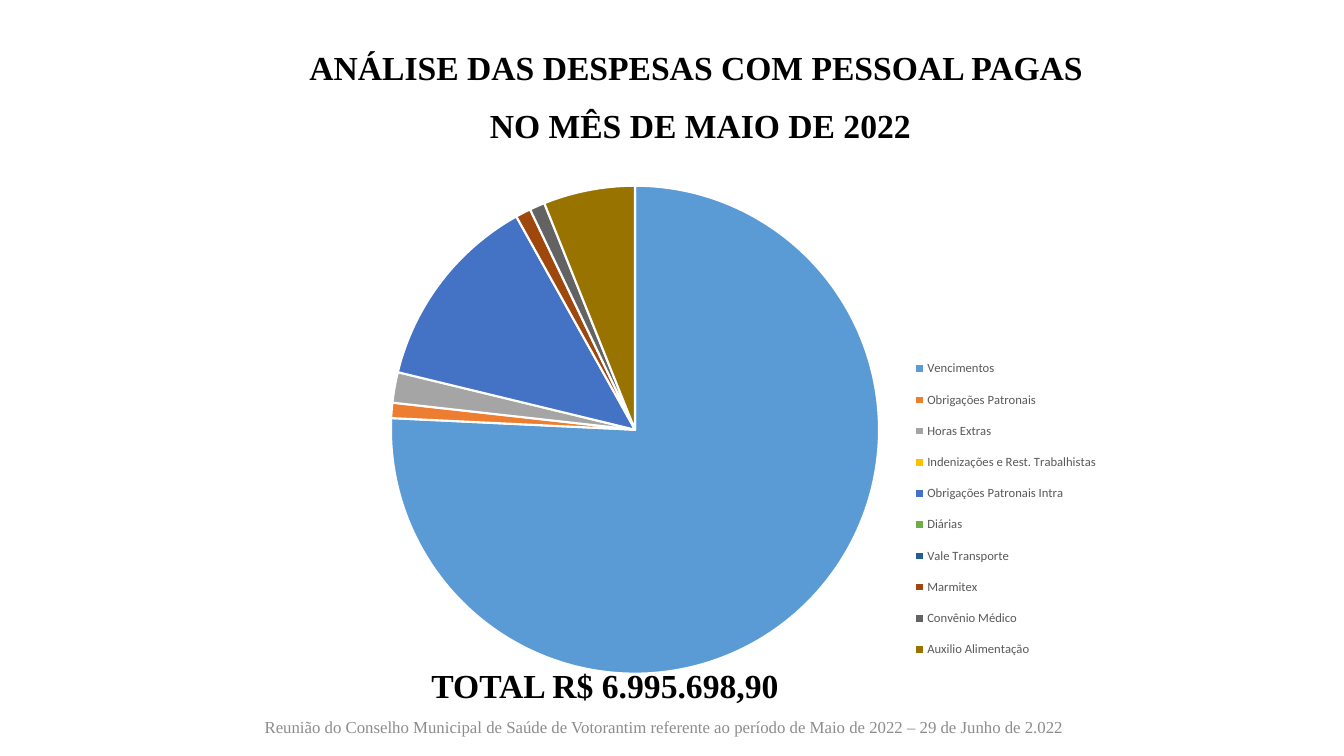
from lxml import etree
from pptx import Presentation
from pptx import util as u
from pptx.chart.data import CategoryChartData
from pptx.dml.color import RGBColor
from pptx.enum import chart as ch, text as t
from pptx.oxml.ns import qn

WIDTH, HEIGHT = u.Inches(13.33), u.Inches(7.5)
SERIF, SANS = "Times New Roman", "Calibri"
BLACK = RGBColor(0x00, 0x00, 0x00)
WHITE = RGBColor(0xFF, 0xFF, 0xFF)
LEGEND_GRAY = RGBColor(0x59, 0x59, 0x59)
FOOTER_GRAY = RGBColor(0x8C, 0x8C, 0x8C)

# Expense, share of the total in percent, slice colour
EXPENSES = [
    ("Vencimentos", 75, RGBColor(0x5B, 0x9B, 0xD5)),
    ("Obrigações Patronais", 1, RGBColor(0xED, 0x7D, 0x31)),
    ("Horas Extras", 2, RGBColor(0xA5, 0xA5, 0xA5)),
    ("Indenizações e Rest. Trabalhistas", 0, RGBColor(0xFF, 0xC0, 0x00)),
    ("Obrigações Patronais Intra ", 13, RGBColor(0x44, 0x72, 0xC4)),
    ("Diárias", 0, RGBColor(0x70, 0xAD, 0x47)),
    ("Vale Transporte", 0, RGBColor(0x25, 0x5E, 0x91)),
    ("Marmitex", 1, RGBColor(0x9E, 0x48, 0x0E)),
    ("Convênio Médico", 1, RGBColor(0x63, 0x63, 0x63)),
    ("Auxilio Alimentação", 6, RGBColor(0x99, 0x73, 0x00)),
]


def area(left, top, width, height):
    """Turn percentages of the slide into lengths."""
    return [int(share * side / 100) for share, side in
            zip((left, top, width, height), (WIDTH, HEIGHT) * 2)]


def style_font(font, size, color, name, bold=False):
    font.size, font.name, font.bold = u.Pt(size), name, bold
    font.color.rgb = color


def add_text(slide, place, lines, size, color, bold=False,
             align=t.PP_ALIGN.CENTER, anchor=t.MSO_ANCHOR.TOP,
             space_after=0):
    frame = slide.shapes.add_textbox(*place).text_frame
    frame.word_wrap = True
    frame.vertical_anchor = anchor
    for number, line in enumerate(lines):
        paragraph = frame.add_paragraph() if number else frame.paragraphs[0]
        paragraph.alignment = align
        paragraph.space_after = u.Pt(space_after)
        run = paragraph.add_run()
        run.text = line
        style_font(run.font, size, color, SERIF, bold)


def set_layout(parent, before, x, y, w, h, inner=False):
    """Fix a chart part at shares of the chart area."""
    for old in parent.findall(qn("c:layout")):
        parent.remove(old)
    layout = etree.Element(qn("c:layout"))
    manual = etree.SubElement(layout, qn("c:manualLayout"))
    settings = [("layoutTarget", "inner")] if inner else []
    settings += [("xMode", "edge"), ("yMode", "edge"),
                 ("x", x), ("y", y), ("w", w), ("h", h)]
    for tag, value in settings:
        etree.SubElement(manual, qn("c:" + tag)).set("val", str(value))
    parent.insert(before, layout)


def add_expense_pie(slide, place):
    data = CategoryChartData(number_format="0")
    data.categories = [name for name, _, _ in EXPENSES]
    data.add_series("Series 1", [share for _, share, _ in EXPENSES])
    pie = slide.shapes.add_chart(ch.XL_CHART_TYPE.PIE, *place, data).chart
    pie.has_title = False
    style_font(pie.font, 10, BLACK, SANS)

    # Slices
    plot = pie.plots[0]
    plot.vary_by_categories = True
    for number, (_, _, color) in enumerate(EXPENSES):
        slice_format = plot.series[0].points[number].format
        slice_format.fill.solid()
        slice_format.fill.fore_color.rgb = color
        slice_format.line.color.rgb = WHITE
        slice_format.line.width = u.Pt(1.5)

    # Legend
    pie.has_legend = True
    legend = pie.legend
    legend.position = ch.XL_LEGEND_POSITION.BOTTOM
    legend.include_in_layout = False
    style_font(legend.font, 9, LEGEND_GRAY, SANS)

    # Places of the pie and of its legend
    plot_area = pie.element.find(".//" + qn("c:plotArea"))
    legend_area = pie.element.find(".//" + qn("c:legend"))
    set_layout(plot_area, 0, 0.24, 0.03, 0.52, 0.89, inner=True)
    set_layout(legend_area, 1, 0.79, 0.32, 0.2, 0.6)


def main():
    prs = Presentation()
    prs.slide_width, prs.slide_height = WIDTH, HEIGHT
    slide = prs.slides.add_slide(prs.slide_layouts[6])

    # Title
    add_text(slide, area(6.65, 5.6, 90.92, 29.6),
             ["ANÁLISE DAS DESPESAS COM PESSOAL PAGAS ",
              "NO MÊS DE MAIO DE 2022"],
             24, BLACK, bold=True, space_after=12)
    # Footer
    add_text(slide, area(16.58, 92.93, 65.72, 6.4),
             ["Reunião do Conselho Municipal de Saúde de Votorantim referente "
              "ao período de Maio de 2022 – 29 de Junho de 2.022"],
             12, FOOTER_GRAY, anchor=t.MSO_ANCHOR.MIDDLE)
    # Total
    add_text(slide, area(31.36, 87.33, 36.76, 6.67),
             ["TOTAL R$ 6.995.698,90"], 24, BLACK, bold=True,
             align=t.PP_ALIGN.LEFT)
    # Chart
    add_expense_pie(slide, area(11.88, 22.4, 70.74, 72.53))

    prs.save("out.pptx")


if __name__ == "__main__":
    main()
